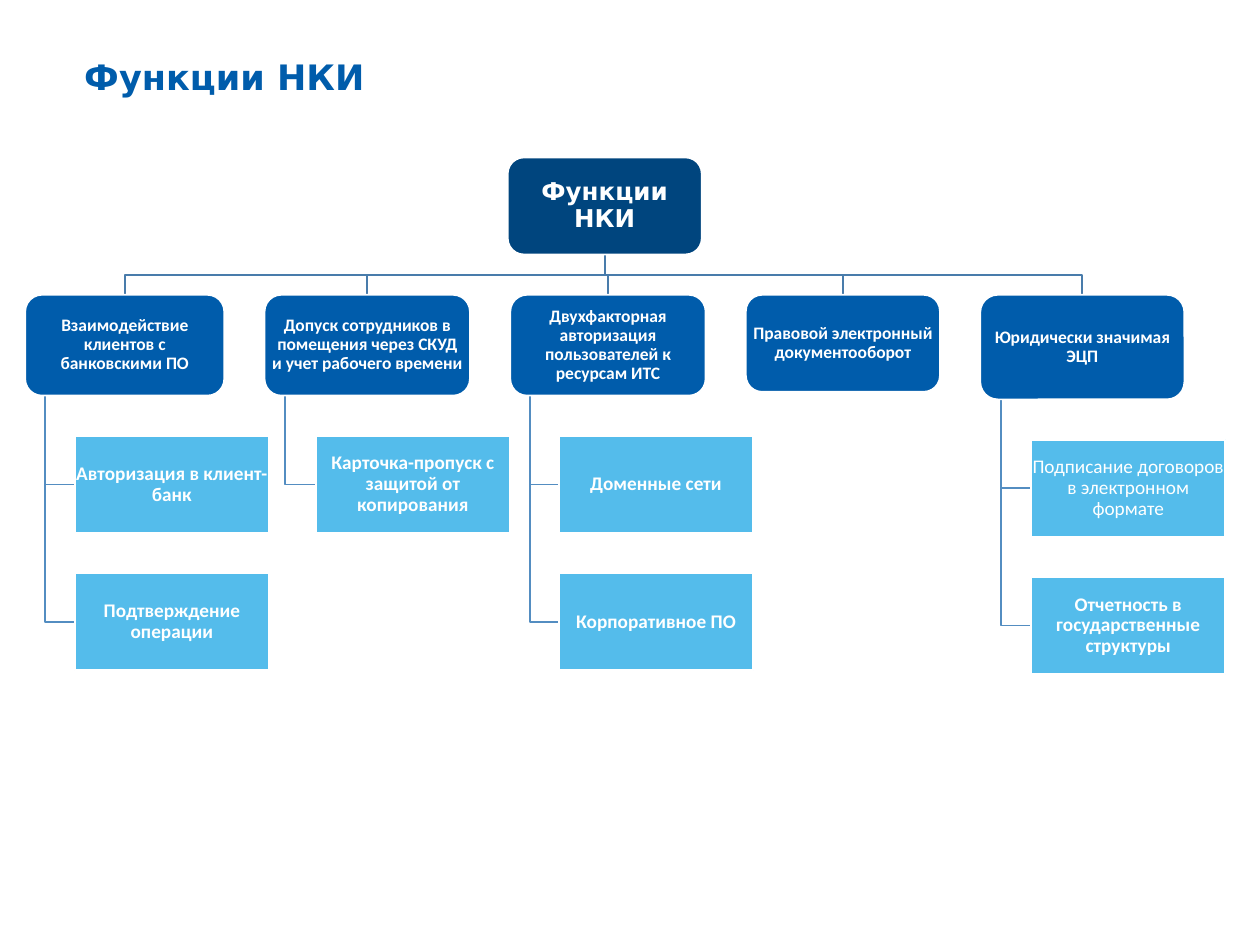
"""Build the slide with the tree of NKI functions."""
from dataclasses import dataclass

import pptx
import pptx.dml.color
import pptx.enum.shapes
import pptx.enum.text
import pptx.util

Inches = pptx.util.Inches
Shapes = pptx.enum.shapes.MSO_SHAPE
Point = tuple[float, float]

COLOURS = {
    "root": "00457E",
    "head": "005CAB",
    "leaf": "54BCEB",
    "trunk": "497CAB",
    "twig": "538DC1",
    "white": "FFFFFF",
}
BOX_WIDTH, BOX_HEIGHT = 1.54, 0.77
ROOT_LEFT, ROOT_TOP = 4.03, 1.25
LEVEL_GAP = 0.32
HEAD_TOP = ROOT_TOP + BOX_HEIGHT + LEVEL_GAP
LEAF_PITCH = BOX_HEIGHT + LEVEL_GAP


@dataclass(frozen=True)
class Leaf:
    text: str
    bold: bool = True


@dataclass(frozen=True)
class Branch:
    text: str
    left: float
    width: float
    height: float
    leaves: tuple[Leaf, ...] = ()


BRANCHES = (
    Branch("Взаимодействие клиентов с банковскими ПО", 0.2, 1.58, 0.8,
           (Leaf("Авторизация в клиент-банк"), Leaf("Подтверждение операции"))),
    Branch("Допуск сотрудников в помещения через СКУД и учет рабочего времени",
           2.1, 1.63, 0.8, (Leaf("Карточка-пропуск с защитой от копирования"),)),
    Branch("Двухфакторная авторизация пользователей к ресурсам ИТС", 4.05, 1.55, 0.8,
           (Leaf("Доменные сети"), Leaf("Корпоративное ПО"))),
    Branch("Правовой электронный документооборот", 5.92, 1.54, 0.77),
    Branch("Юридически значимая ЭЦП", 7.78, 1.62, 0.83,
           (Leaf("Подписание договоров в электронном формате", bold=False),
            Leaf("Отчетность в государственные структуры"))),
)


def colour(name: str) -> pptx.dml.color.RGBColor:
    """Return the named colour."""
    return pptx.dml.color.RGBColor.from_string(COLOURS[name])


def write(shape, text: str, size: int, ink: str, font: str, bold: bool = True):
    """Write one paragraph in a shape and return it."""
    frame = shape.text_frame
    frame.word_wrap = True
    frame.vertical_anchor = pptx.enum.text.MSO_ANCHOR.MIDDLE
    para = frame.paragraphs[0]
    para.text = text
    para.line_spacing = 0.9
    para.font.size = pptx.util.Pt(size)
    para.font.name = font
    para.font.bold = bold
    para.font.color.rgb = colour(ink)
    return para


def add_box(page, kind, left: float, top: float, width: float, height: float,
            fill: str, text: str, size: int, font: str = "Calibri",
            bold: bool = True) -> None:
    """Draw a filled box with centred white text."""
    box = page.shapes.add_shape(
        kind, Inches(left), Inches(top), Inches(width), Inches(height))
    box.shadow.inherit = False
    box.fill.solid()
    box.fill.fore_color.rgb = colour(fill)
    box.line.color.rgb = colour("white")
    box.line.width = pptx.util.Pt(1)
    frame = box.text_frame
    frame.margin_left = frame.margin_right = Inches(0.01)
    frame.margin_top = frame.margin_bottom = Inches(0.01)
    para = write(box, text, size, "white", font, bold)
    para.alignment = pptx.enum.text.PP_ALIGN.CENTER


def add_elbow(page, points: list[Point], ink: str) -> None:
    """Draw an open line through the points."""
    start, *rest = [(Inches(x), Inches(y)) for x, y in points]
    builder = page.shapes.build_freeform(*start)
    builder.add_line_segments(rest, close=False)
    elbow = builder.convert_to_shape()
    elbow.shadow.inherit = False
    elbow.fill.background()
    elbow.line.color.rgb = colour(ink)
    elbow.line.width = pptx.util.Pt(1)


def add_branch(page, branch: Branch) -> None:
    """Draw a branch with its lines, head and leaves."""
    root_x, root_bottom = ROOT_LEFT + BOX_WIDTH / 2, ROOT_TOP + BOX_HEIGHT
    head_x, middle = branch.left + branch.width / 2, root_bottom + LEVEL_GAP / 2
    add_elbow(page, [(root_x, root_bottom), (root_x, middle),
                     (head_x, middle), (head_x, HEAD_TOP)], "trunk")
    bottom = HEAD_TOP + branch.height
    stem_x = branch.left + branch.width / 10
    leaf_left = branch.left + branch.width / 4
    for row, leaf in enumerate(branch.leaves):
        top = bottom + LEVEL_GAP + row * LEAF_PITCH
        leaf_y = top + BOX_HEIGHT / 2
        add_elbow(page, [(stem_x, bottom), (stem_x, leaf_y), (leaf_left, leaf_y)], "twig")
        add_box(page, Shapes.RECTANGLE, leaf_left, top, BOX_WIDTH, BOX_HEIGHT,
                "leaf", leaf.text, 11, bold=leaf.bold)
    add_box(page, Shapes.ROUNDED_RECTANGLE, branch.left, HEAD_TOP, branch.width,
            branch.height, "head", branch.text, 10)


def main() -> None:
    """Build and save the deck."""
    deck = pptx.Presentation()
    deck.slide_width, deck.slide_height = Inches(10), Inches(7.5)
    page = deck.slides.add_slide(deck.slide_layouts[6])
    title = page.shapes.add_textbox(
        Inches(0.57), Inches(0.37), Inches(8.62), Inches(0.52))
    write(title, "Функции НКИ", 20, "head", "DejaVu Sans")
    for branch in BRANCHES:
        add_branch(page, branch)
    add_box(page, Shapes.ROUNDED_RECTANGLE, ROOT_LEFT, ROOT_TOP, BOX_WIDTH, BOX_HEIGHT,
            "root", "Функции НКИ", 14, "DejaVu Sans")
    deck.save("out.pptx")


if __name__ == "__main__":
    main()
